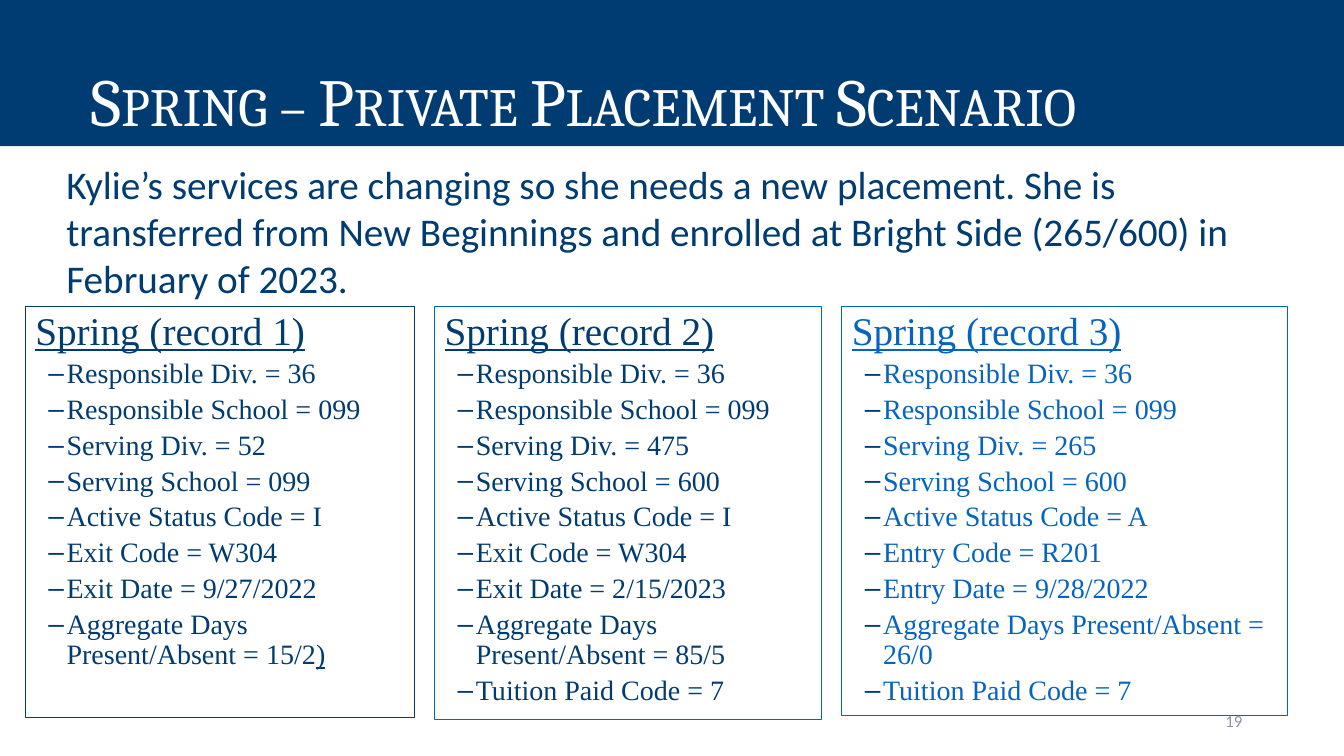
from lxml.etree import SubElement
from pptx import Presentation
from pptx.dml.color import RGBColor
from pptx.enum.text import MSO_ANCHOR, MSO_AUTO_SIZE, PP_ALIGN
from pptx.oxml.ns import qn
from pptx.util import Inches, Pt

SLIDE_WIDTH, SLIDE_HEIGHT = 13.33, 7.5
NAVY, BLUE, WHITE, GREY = "003C71", "0563C1", "FFFFFF", "8C92A5"

# Record columns, left to right
RECORDS_LEFT, RECORDS_TOP, RECORD_GAP = 0.25, 3.04, 0.2
RECORD_FIELDS = ["Responsible Div.", "Responsible School", "Serving Div.", "Serving School",
                 "Active Status Code", "{} Code", "{} Date",
                 "Aggregate Days Present/Absent", "Tuition Paid Code"]
RECORDS = [
    dict(width=3.86, height=4.08, border=NAVY, color=NAVY, event="Exit", stray=")",
         values=["36", "099", "52", "099", "I", "W304", "9/27/2022", "15/2"]),
    dict(width=3.84, height=4.1, border=BLUE, color=NAVY, event="Exit", stray="",
         values=["36", "099", "475", "600", "I", "W304", "2/15/2023", "85/5", "7"]),
    dict(width=4.42, height=4.06, border=BLUE, color=BLUE, event="Entry", stray="",
         values=["36", "099", "265", "600", "A", "R201", "9/28/2022", "26/0", "7"]),
]


def rgb(color):
    return RGBColor.from_string(color)


def apply(target, formats):
    for name, value in formats.items():
        setattr(target, name, value)


def place(part, box):
    for name, length in zip(("left", "top", "width", "height"), box):
        setattr(part, name, Inches(length))


def add_run(paragraph, text, color, **font_formats):
    run = paragraph.add_run()
    run.text = text
    apply(run.font, font_formats)
    run.font.color.rgb = rgb(color)
    return run


def add_text_box(slide, box):
    return slide.shapes.add_textbox(*(Inches(length) for length in box))


def format_list_paragraph(paragraph, margin, indent, bullet=None):
    paragraph.line_spacing = 0.9
    properties = paragraph._p.get_or_add_pPr()
    properties.set("marL", str(Inches(margin)))
    properties.set("indent", str(Inches(indent)))
    # Space before is a share of the line, so it follows the text size
    space_before = SubElement(properties, qn("a:spcBef"))
    SubElement(space_before, qn("a:spcPct")).set("val", "20000")
    if bullet:
        bullet_color = SubElement(properties, qn("a:buClr"))
        SubElement(bullet_color, qn("a:srgbClr")).set("val", NAVY)
        SubElement(properties, qn("a:buFont")).set("typeface", "Arial")
        SubElement(properties, qn("a:buChar")).set("char", bullet)
    else:
        SubElement(properties, qn("a:buNone"))


def build_title(title, box):
    place(title, box)
    title.fill.solid()
    title.fill.fore_color.rgb = rgb(NAVY)
    apply(title.text_frame, dict(
        word_wrap=True, auto_size=MSO_AUTO_SIZE.NONE, vertical_anchor=MSO_ANCHOR.BOTTOM,
        margin_left=Inches(0.9), margin_right=Inches(0.1),
        margin_top=Inches(0.05), margin_bottom=Inches(0.05)))
    heading = title.text_frame.paragraphs[0]
    apply(heading, dict(alignment=PP_ALIGN.LEFT, line_spacing=0.9))
    run = add_run(heading, "Spring – Private Placement Scenario", WHITE,
                  size=Pt(48), name="Cambria")
    run.font._element.set("cap", "small")


def build_scenario(slide, box):
    frame = add_text_box(slide, box).text_frame
    apply(frame, dict(word_wrap=True, auto_size=MSO_AUTO_SIZE.SHAPE_TO_FIT_TEXT))
    add_run(frame.paragraphs[0],
            "Kylie’s services are changing so she needs a new placement. She is transferred "
            "from New Beginnings and enrolled at Bright Side (265/600) in February of 2023.",
            NAVY, size=Pt(28), name="Calibri")


def build_record(panel, box, number, record):
    place(panel, box)
    panel.line.color.rgb = rgb(record["border"])
    panel.line.width = Pt(0.75)
    frame = panel.text_frame
    apply(frame, dict(word_wrap=True, auto_size=MSO_AUTO_SIZE.NONE,
                      vertical_anchor=MSO_ANCHOR.TOP))

    # Underlined heading
    heading = frame.paragraphs[0]
    format_list_paragraph(heading, 0.25, -0.25)
    add_run(heading, f"Spring (record {number})", record["color"],
            size=Pt(28), name="Times New Roman", underline=True)

    # Dashed list of fields
    item_font = dict(size=Pt(20), name="Times New Roman")
    for field, value in zip(RECORD_FIELDS, record["values"]):
        item = frame.add_paragraph()
        item.level = 1
        format_list_paragraph(item, 0.31, -0.18, bullet="–")
        add_run(item, f"{field.format(record['event'])} = {value}", record["color"], **item_font)
    if record["stray"]:
        add_run(item, record["stray"], record["color"], underline=True, **item_font)


def build_records(slide, left, top):
    panels = [slide.placeholders[1], slide.placeholders[2],
              add_text_box(slide, (left, top, 1, 1))]
    for number, (panel, record) in enumerate(zip(panels, RECORDS), start=1):
        build_record(panel, (left, top, record["width"], record["height"]), number, record)
        left += record["width"] + RECORD_GAP


def build_slide_number(slide, box):
    frame = add_text_box(slide, box).text_frame
    apply(frame, dict(word_wrap=True, vertical_anchor=MSO_ANCHOR.MIDDLE))
    frame.paragraphs[0].alignment = PP_ALIGN.RIGHT
    add_run(frame.paragraphs[0], "19", GREY, size=Pt(12), name="Calibri")


def main():
    presentation = Presentation()
    presentation.slide_width = Inches(SLIDE_WIDTH)
    presentation.slide_height = Inches(SLIDE_HEIGHT)
    slide = presentation.slides.add_slide(presentation.slide_layouts.get_by_name("Two Content"))
    build_title(slide.shapes.title, (0, 0, SLIDE_WIDTH, 1.45))
    build_slide_number(slide, (9.42, 6.95, 3, 0.4))
    build_scenario(slide, (0.56, 1.54, 12.22, 1.51))
    build_records(slide, RECORDS_LEFT, RECORDS_TOP)
    presentation.save("out.pptx")


if __name__ == "__main__":
    main()
